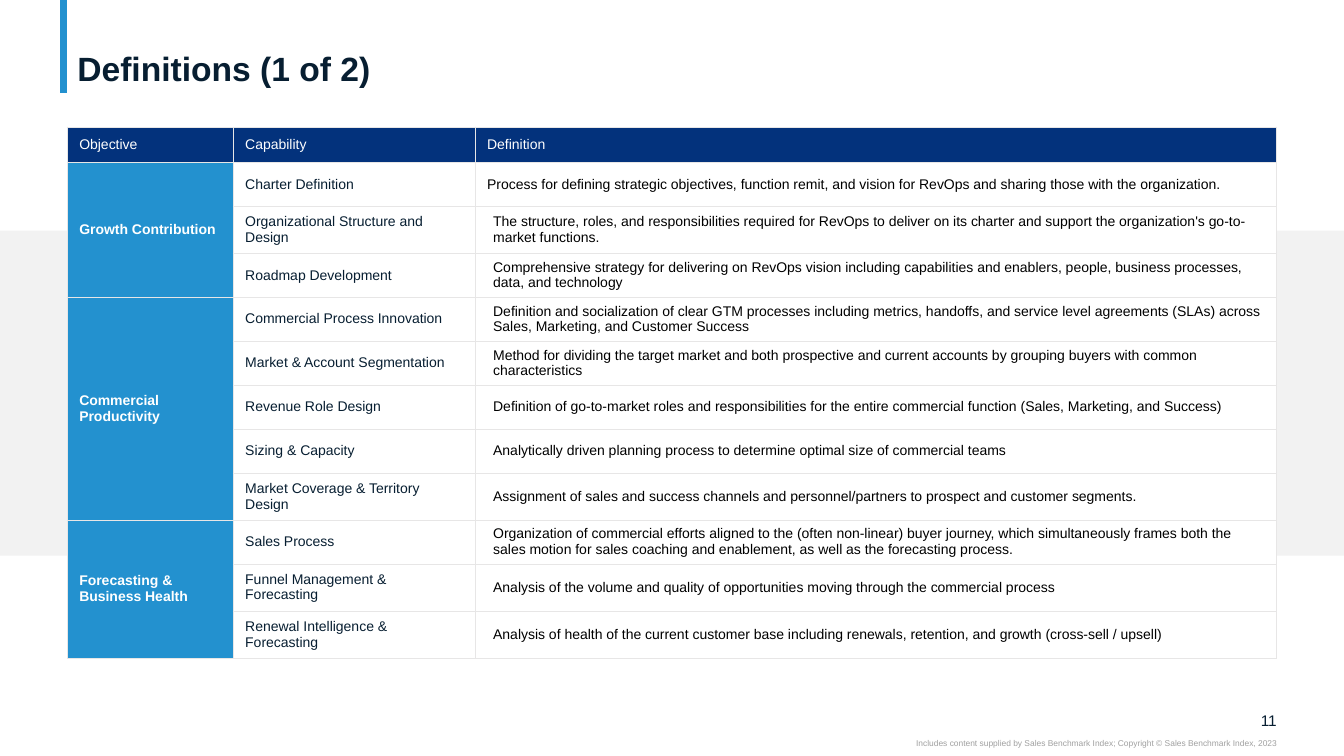
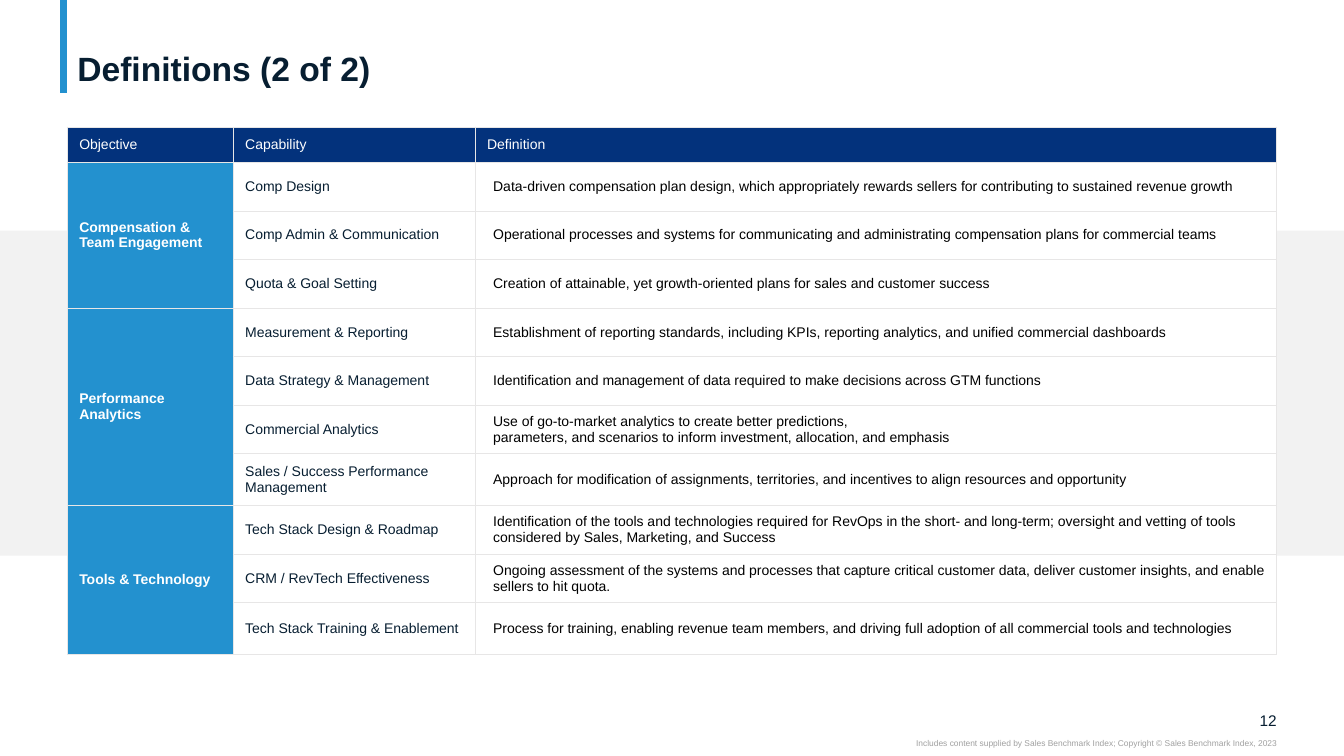
"""Build two slides of capability definitions grouped by objective."""
from lxml import etree
from pptx import Presentation
from pptx.dml.color import RGBColor
from pptx.enum.shapes import MSO_CONNECTOR, MSO_SHAPE
from pptx.enum.text import MSO_ANCHOR, MSO_AUTO_SIZE, PP_ALIGN
from pptx.oxml.ns import qn
from pptx.util import Inches, Pt

LINE, RECT = MSO_CONNECTOR.STRAIGHT, MSO_SHAPE.RECTANGLE
TOP, MID, LOW = MSO_ANCHOR.TOP, MSO_ANCHOR.MIDDLE, MSO_ANCHOR.BOTTOM
LEFT, RIGHT = PP_ALIGN.LEFT, PP_ALIGN.RIGHT
FIXED = MSO_AUTO_SIZE.NONE

HEX = {"navy": "03327C", "blue": "2391CF", "ink": "071E31", "black": "000000",
       "white": "FFFFFF", "band": "F2F2F2", "rule": "E7E6E6", "note": "A0A0A0"}
TINT = {name: RGBColor.from_string(code) for name, code in HEX.items()}
FONT = "Arial"
WIDE, HIGH = Inches(13.33), Inches(7.5)
COLS = [12.35, 18, 59.65]
HEADS = ["Objective", "Capability", "Definition"]
LOOKS = [("blue", "white", True), ("white", "ink", False), ("white", "black", False)]
NOTE = ("Includes content supplied by Sales Benchmark Index; "
        "Copyright © Sales Benchmark Index, 2023")

PAGES = [
    {"title": "Definitions (1 of 2)", "num": "11", "row": 31.4, "tall": 33.6,
     "long": [2, 8, 10, 11], "flush": [1], "pad": 0.04, "inner": 0.04,
     "groups": [
         ("Growth Contribution", [
             ("Charter Definition",
              "Process for defining strategic objectives, function remit, and vision for RevOps "
              "and sharing those with the organization."),
             ("Organizational Structure and Design",
              "The structure, roles, and responsibilities required for RevOps to deliver on its "
              "charter and support the organization's go-to-market functions."),
             ("Roadmap Development",
              "Comprehensive strategy for delivering on RevOps vision including capabilities and "
              "enablers, people, business processes, data, and technology")]),
         ("Commercial Productivity", [
             ("Commercial Process Innovation",
              "Definition and socialization of clear GTM processes including metrics, handoffs, "
              "and service level agreements (SLAs) across Sales, Marketing, and Customer Success"),
             ("Market & Account Segmentation",
              "Method for dividing the target market and both prospective and current accounts "
              "by grouping buyers with common characteristics"),
             ("Revenue Role Design",
              "Definition of go-to-market roles and responsibilities for the entire commercial "
              "function (Sales, Marketing, and Success)"),
             ("Sizing & Capacity",
              "Analytically driven planning process to determine optimal size of commercial teams"),
             ("Market Coverage & Territory Design",
              "Assignment of sales and success channels and personnel/partners to prospect and "
              "customer segments.")]),
         ("Forecasting & Business Health", [
             ("Sales Process",
              "Organization of commercial efforts aligned to the (often non-linear) buyer journey, "
              "which simultaneously frames both the sales motion for sales coaching and "
              "enablement, as well as the forecasting process."),
             ("Funnel Management & Forecasting",
              "Analysis of the volume and quality of opportunities moving through the commercial "
              "process"),
             ("Renewal Intelligence & Forecasting",
              "Analysis of health of the current customer base including renewals, retention, "
              "and growth (cross-sell / upsell)")])]},
    {"title": "Definitions (2 of 2)", "num": "12", "row": 34.7, "tall": 37.1,
     "long": [7, 10], "flush": [], "pad": 0.05, "inner": 0,
     "groups": [
         ("Compensation & Team Engagement", [
             ("Comp Design",
              "Data-driven compensation plan design, which appropriately rewards sellers for "
              "contributing to sustained revenue growth"),
             ("Comp Admin & Communication",
              "Operational processes and systems for communicating and administrating "
              "compensation plans for commercial teams"),
             ("Quota & Goal Setting",
              "Creation of attainable, yet growth-oriented plans for sales and customer success")]),
         ("Performance Analytics", [
             ("Measurement & Reporting",
              "Establishment of reporting standards, including KPIs, reporting analytics, and "
              "unified commercial dashboards"),
             ("Data Strategy & Management",
              "Identification and management of data required to make decisions across GTM "
              "functions"),
             ("Commercial Analytics",
              "Use of go-to-market analytics to create better predictions,\n"
              "parameters, and scenarios to inform investment, allocation, and emphasis"),
             ("Sales / Success Performance Management",
              "Approach for modification of assignments, territories, and incentives to align "
              "resources and opportunity")]),
         ("Tools & Technology", [
             ("Tech Stack Design & Roadmap",
              "Identification of the tools and technologies required for RevOps in the short- and "
              "long-term; oversight and vetting of tools considered by Sales, Marketing, and "
              "Success"),
             ("CRM / RevTech Effectiveness",
              "Ongoing assessment of the systems and processes that capture critical customer "
              "data, deliver customer insights, and enable sellers to hit quota."),
             ("Tech Stack Training & Enablement",
              "Process for training, enabling revenue team members, and driving full adoption of "
              "all commercial tools and technologies")])]},
]


def area(left, top, width, height):
    """Turn percentages of the slide into lengths."""
    return [int(share * side / 100) for share, side in
            zip((left, top, width, height), (WIDE, HIGH, WIDE, HIGH))]


def write(frame, text, size, tint, bold=False, align=LEFT):
    """Fill the first paragraph of a frame and return it."""
    para = frame.paragraphs[0]
    para.alignment = align
    for count, line in enumerate(text.split("\n")):
        if count:
            para.add_line_break()
        run = para.add_run()
        run.text = line
        run.font.name, run.font.size, run.font.bold = FONT, Pt(size), bold
        run.font.color.rgb = TINT[tint]
    return para


deck = Presentation()
deck.slide_width, deck.slide_height = WIDE, HIGH

for page in PAGES:
    slide = deck.slides.add_slide(deck.slide_layouts[5])
    shapes = slide.shapes

    bar = shapes.add_connector(LINE, *area(4.7, 0, 4.7, 12.3))
    bar.line.color.rgb, bar.line.width = TINT["blue"], Pt(5)
    etree.SubElement(bar.element.spPr, qn("a:effectLst"))

    band = shapes.add_shape(RECT, *area(0, 30.5, 100, 43))
    band.shadow.inherit = False
    band.fill.solid()
    band.fill.fore_color.rgb = TINT["band"]
    band.line.fill.background()

    title = shapes.title
    title.left, title.top, title.width, title.height = area(5, 0.5, 90, 11.2)
    frame = title.text_frame
    frame.auto_size, frame.word_wrap, frame.vertical_anchor = FIXED, True, LOW
    frame.margin_left = frame.margin_right = Inches(0.1)
    frame.margin_top = frame.margin_bottom = 0
    write(frame, page["title"], 24, "ink", True).line_spacing = 0.9

    for text, spot, size, tint, anchor in [
            (page["num"], (92.5, 94, 2.5, 2.5), 11, "ink", MID),
            (NOTE, (56.3, 97.6, 38.7, 1.4), 6, "note", TOP)]:
        frame = shapes.add_textbox(*area(*spot)).text_frame
        frame.word_wrap, frame.vertical_anchor = True, anchor
        frame.margin_left = frame.margin_right = 0
        frame.margin_top = frame.margin_bottom = 0
        write(frame, text, size, tint, align=RIGHT)

    rows, spans = [HEADS], []
    for goal, items in page["groups"]:
        spans.append((len(rows), len(rows) + len(items) - 1))
        for place, (skill, sense) in enumerate(items):
            rows.append(["" if place else goal, skill, sense])

    sizes = [25.2] + [page["tall" if at in page["long"] else "row"]
                      for at in range(1, len(rows))]
    holder = shapes.add_table(len(rows), len(COLS), *area(5, 16.8, 90, 70))
    holder.height = Pt(sum(sizes))
    table = holder.table
    table.first_row = table.horz_banding = False
    for col, share in zip(table.columns, COLS):
        col.width = int(WIDE * share / 100)
    for row, size in zip(table.rows, sizes):
        row.height = Pt(size)
    for first, last in spans:
        table.cell(first, 0).merge(table.cell(last, 0))

    for at, texts in enumerate(rows):
        for col, text in enumerate(texts):
            cell = table.cell(at, col)
            sense = at > 0 and col == 2
            fill, tint, bold = LOOKS[col] if at else ("navy", "white", False)
            cell.vertical_anchor = MID
            cell.margin_left = cell.margin_right = Inches(0.12)
            cell.margin_top = cell.margin_bottom = Inches(page["inner" if sense else "pad"])
            props = cell._tc.get_or_add_tcPr()
            for side in ("lnL", "lnR", "lnT", "lnB"):
                edge = etree.SubElement(props, qn(f"a:{side}"), w=str(Pt(0.5)))
                solid = etree.SubElement(edge, qn("a:solidFill"))
                etree.SubElement(solid, qn("a:srgbClr"), val=HEX["rule"])
            cell.fill.solid()
            cell.fill.fore_color.rgb = TINT[fill]
            if text:
                para = write(cell.text_frame, text, 10, tint, bold)
                if sense and at not in page["flush"]:
                    para._p.get_or_add_pPr().set("marL", str(Inches(0.06)))

deck.save("out.pptx")
